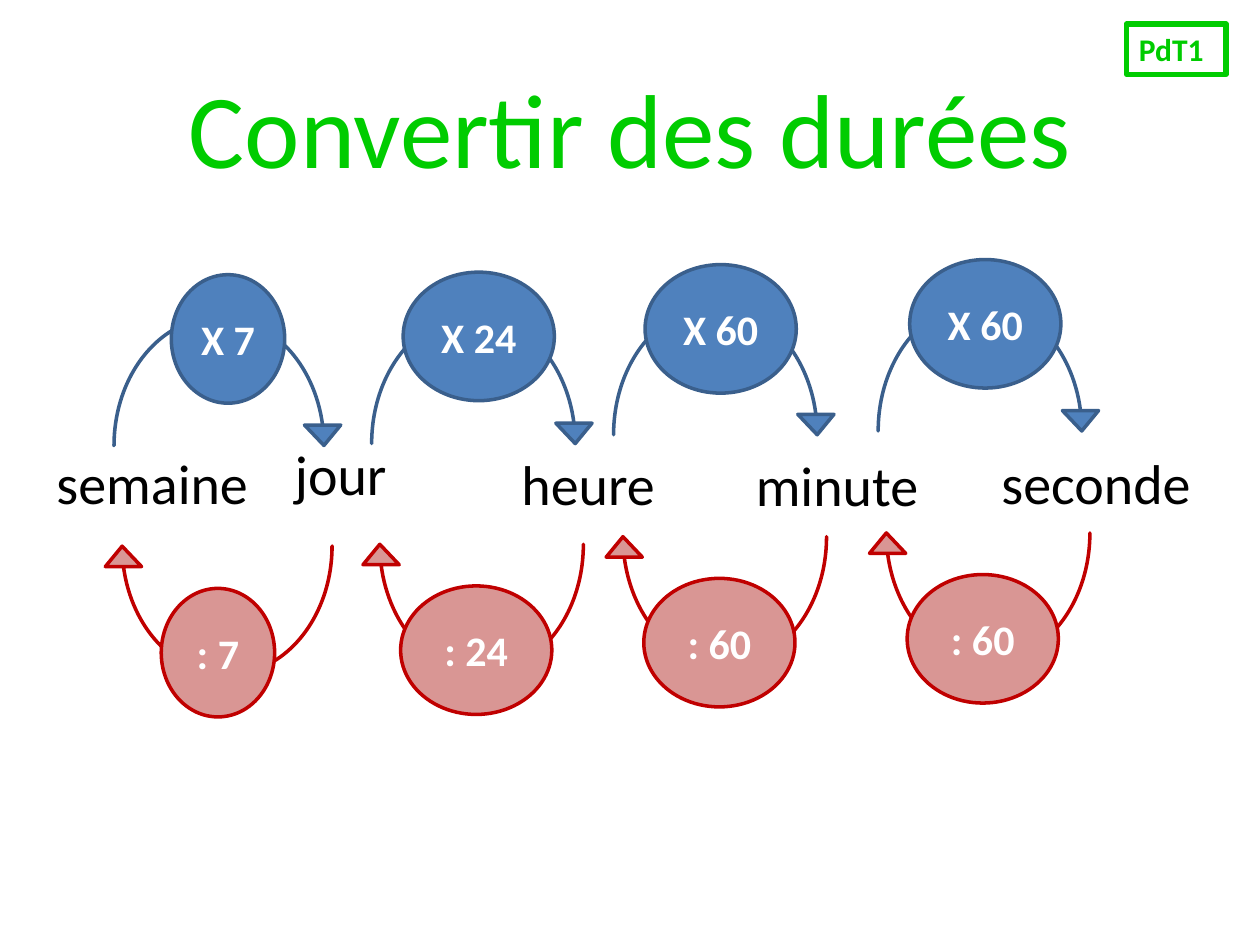
from pptx import Presentation
from pptx.dml.color import RGBColor
from pptx.enum.shapes import MSO_SHAPE
from pptx.enum.text import MSO_ANCHOR, PP_ALIGN
from pptx.util import Inches, Pt

GREEN = RGBColor(0x00, 0xCC, 0x00)
BLACK = RGBColor(0x00, 0x00, 0x00)
WHITE = RGBColor(0xFF, 0xFF, 0xFF)
BLUE = RGBColor(0x4F, 0x81, 0xBD)
DARK_BLUE = RGBColor(0x3A, 0x5F, 0x8C)
PINK = RGBColor(0xD9, 0x96, 0x94)
RED = RGBColor(0xC0, 0x00, 0x00)
FONT = "Calibri"

TITLE = "Convertir des durées"
TAG = "PdT1"
# unit, left, top, width
UNITS = [
    ("semaine", 0.35, 3.51, 1.74),
    ("jour", 2.24, 3.44, 0.95),
    ("heure", 4.04, 3.52, 1.34),
    ("minute", 5.9, 3.53, 1.62),
    ("seconde", 7.85, 3.51, 1.87),
]
# factor, arrow left and top, arrow span, oval left and top, oval width
MULTIPLICATIONS = [
    ("X 7", 1.3, 2.12, 1.81, 1.36, 2.18, 0.9),
    ("X 24", 3.32, 2.13, 1.76, 3.2, 2.16, 1.2),
    ("X 60", 5.24, 2.06, 1.76, 5.12, 2.1, 1.2),
    ("X 60", 7.34, 2.03, 1.76, 7.22, 2.06, 1.2),
]
DIVISIONS = [
    (": 7", 1.22, 3.94, 1.81, 1.28, 4.67, 0.9),
    (": 24", 3.24, 3.95, 1.76, 3.18, 4.65, 1.2),
    (": 60", 5.17, 3.89, 1.76, 5.11, 4.59, 1.2),
    (": 60", 7.26, 3.86, 1.76, 7.2, 4.56, 1.2),
]
# steps, arrow rotation, fill, line
ROWS = [(MULTIPLICATIONS, 90, BLUE, DARK_BLUE), (DIVISIONS, 270, PINK, RED)]
DEPTH = 1.02  # arrow depth and oval height
ARROW_ADJUSTMENTS = (0, 0.282, 0.159)


def write(shape, text, size, color, bold=False, align=PP_ALIGN.LEFT, anchor=MSO_ANCHOR.TOP):
    frame = shape.text_frame
    frame.word_wrap = True
    frame.vertical_anchor = anchor
    para = frame.paragraphs[0]
    para.alignment = align
    span = para.add_run()
    span.text = text
    span.font.name = FONT
    span.font.size = Pt(size)
    span.font.bold = bold
    span.font.color.rgb = color


def add_shape(parent, kind, left, top, width, height, line, weight, fill=None):
    shape = parent.shapes.add_shape(kind, Inches(left), Inches(top), Inches(width), Inches(height))
    shape.shadow.inherit = False
    if fill is None:
        shape.fill.background()
    else:
        shape.fill.solid()
        shape.fill.fore_color.rgb = fill
    shape.line.color.rgb = line
    shape.line.width = Pt(weight)
    return shape


def add_step(slide, step, rotation, fill, line):
    """Group a curved arrow with the oval that carries its factor."""
    factor, arrow_left, arrow_top, span, oval_left, oval_top, oval_width = step
    group = slide.shapes.add_group_shape()
    arrow = add_shape(group, MSO_SHAPE.CURVED_RIGHT_ARROW, arrow_left, arrow_top,
                      DEPTH, span, line, 2, fill)
    for index, value in enumerate(ARROW_ADJUSTMENTS):
        arrow.adjustments[index] = value
    arrow.rotation = rotation
    arrow._element.spPr.xfrm.set("flipV", "1")
    oval = add_shape(group, MSO_SHAPE.OVAL, oval_left, oval_top,
                     oval_width, DEPTH, line, 2, fill)
    write(oval, factor, 24, WHITE, True, PP_ALIGN.CENTER, MSO_ANCHOR.MIDDLE)


def main():
    deck = Presentation()
    deck.slide_width, deck.slide_height = Inches(10), Inches(7.5)
    slide = deck.slides.add_slide(deck.slide_layouts[5])

    title = slide.shapes.title
    title.left, title.top = Inches(0.5), Inches(0.3)
    title.width, title.height = Inches(9), Inches(1.4)
    write(title, TITLE, 60, GREEN, align=PP_ALIGN.CENTER, anchor=MSO_ANCHOR.MIDDLE)

    tag = add_shape(slide, MSO_SHAPE.RECTANGLE, 8.94, 0.19, 0.79, 0.4, GREEN, 3)
    write(tag, TAG, 18, GREEN, True)

    for unit, left, top, width in UNITS:
        box = slide.shapes.add_textbox(Inches(left), Inches(top), Inches(width), Inches(0.66))
        write(box, unit, 32, BLACK)

    for steps, rotation, fill, line in ROWS:
        for step in steps:
            add_step(slide, step, rotation, fill, line)

    deck.save("out.pptx")


if __name__ == "__main__":
    main()
